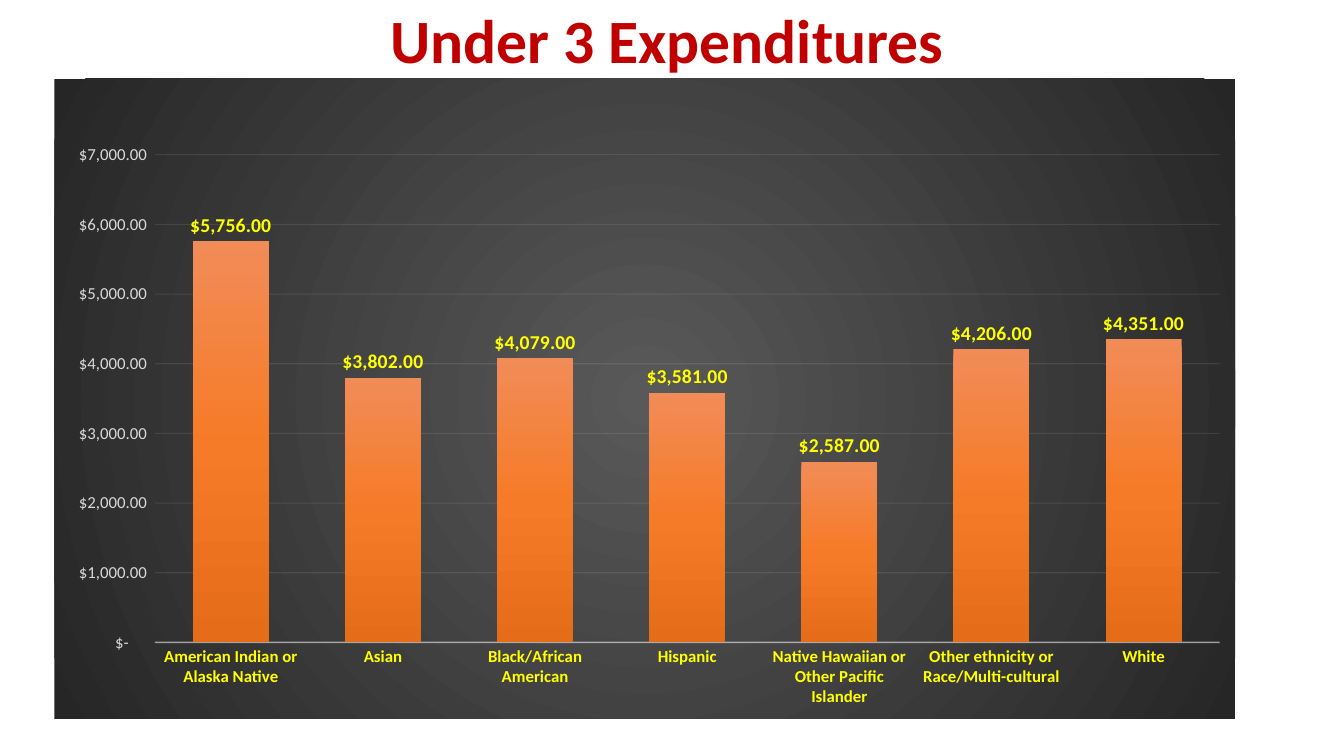
"""Build the slide on spending for children under three, by group."""
from dataclasses import dataclass

from lxml import etree
from pptx import Presentation
from pptx.chart.data import CategoryChartData as ChartData
from pptx.dml.color import RGBColor as Color
from pptx.enum.chart import XL_CHART_TYPE as Kind
from pptx.enum.chart import XL_LABEL_POSITION as Place
from pptx.enum.chart import XL_TICK_MARK as Tick
from pptx.enum.text import MSO_ANCHOR as Anchor
from pptx.enum.text import PP_ALIGN as Align
from pptx.oxml import parse_xml
from pptx.oxml.ns import qn
from pptx.util import Inches, Pt

DRAW = "http://schemas.openxmlformats.org/drawingml/2006/main"
CHART = "http://schemas.openxmlformats.org/drawingml/2006/chart"
MONEY = r'_("$"* #,##0.00_);_("$"* \(#,##0.00\);_("$"* "-"??_);_(@_)'
LINEAR = '<a:lin ang="5400000" scaled="0"/>'
CIRCLE = ('<a:path path="circle"><a:fillToRect l="50000" t="50000" '
          'r="50000" b="50000"/></a:path>')

SPEND = {
    "American Indian or Alaska Native": 5756,
    "Asian": 3802,
    "Black/African American": 4079,
    "Hispanic": 3581,
    "Native Hawaiian or Other Pacific Islander": 2587,
    "Other ethnicity or Race/Multi-cultural": 4206,
    "White": 4351,
}


@dataclass(frozen=True)
class Theme:
    font: str = "Calibri"
    title: str = "C00000"
    label: str = "FFFF00"
    scale: str = "D9D9D9"
    rule: str = "F2F2F2"
    bars: tuple = ((0, "F18C57"), (50, "F67B28"), (100, "E56C19"))
    back: tuple = ((0, "595959"), (100, "262626"))
    head_size: int = 44
    mark_size: int = 14
    axis_size: int = 12
    base_size: int = 10


def blend(stops, shade):
    marks = "".join(f'<a:gs pos="{at * 1000}"><a:srgbClr val="{tone}"/></a:gs>'
                    for at, tone in stops)
    return parse_xml(f'<a:gradFill xmlns:a="{DRAW}" rotWithShape="1">'
                     f'<a:gsLst>{marks}</a:gsLst>{shade}</a:gradFill>')


class Deck:
    def __init__(self, theme):
        self.theme = theme
        self.show = Presentation()
        self.show.slide_width = Inches(13.33)
        self.show.slide_height = Inches(7.5)
        self.slide = self.show.slides.add_slide(self.show.slide_layouts[5])

    def style(self, font, size, tone, bold=False):
        font.name = self.theme.font
        font.size = Pt(size)
        font.bold = bold
        font.color.rgb = Color.from_string(tone)

    def title(self, text, *box):
        shape = self.slide.shapes.title
        shape.left, shape.top, shape.width, shape.height = map(Inches, box)
        frame = shape.text_frame
        frame.text = text
        frame.vertical_anchor = Anchor.MIDDLE
        line = frame.paragraphs[0]
        line.alignment = Align.CENTER
        line.line_spacing = 0.9
        self.style(line.font, self.theme.head_size, self.theme.title, True)

    def rule(self, part, width, alpha):
        line = part.format.line
        line.width = Pt(width)
        line.color.rgb = Color.from_string(self.theme.rule)
        tone = part.format.element.find(f"{qn('c:spPr')}//{qn('a:srgbClr')}")
        etree.SubElement(tone, qn("a:alpha"), val=str(alpha * 1000))

    def axis(self, axis, tone, bold):
        axis.major_tick_mark = axis.minor_tick_mark = Tick.NONE
        self.style(axis.tick_labels.font, self.theme.axis_size, tone, bold)

    def layout(self, chart, **frame):
        area = chart.element.find(f".//{qn('c:plotArea')}")
        old = area.find(qn("c:layout"))
        if old is not None:
            area.remove(old)
        parts = "".join(f'<c:{key} val="{val}"/>' for key, val in frame.items())
        area.insert(0, parse_xml(
            f'<c:layout xmlns:c="{CHART}"><c:manualLayout>'
            '<c:layoutTarget val="inner"/><c:xMode val="edge"/>'
            f'<c:yMode val="edge"/>{parts}</c:manualLayout></c:layout>'))

    def fill(self, chart):
        root = chart.element
        panel = parse_xml(f'<c:spPr xmlns:c="{CHART}" xmlns:a="{DRAW}">'
                          '<a:ln><a:noFill/></a:ln></c:spPr>')
        panel.insert(0, blend(self.theme.back, CIRCLE))
        root.find(qn("c:chart")).addnext(panel)
        bars = chart.plots[0].series[0]
        bars.invert_if_negative = False
        bars.format.fill.solid()
        solid = root.find(f".//{qn('c:ser')}/{qn('c:spPr')}/{qn('a:solidFill')}")
        solid.getparent().replace(solid, blend(self.theme.bars, LINEAR))

    def chart(self, spend, *box):
        theme = self.theme
        data = ChartData(number_format=MONEY)
        data.categories = list(spend)
        data.add_series("Series 1", list(spend.values()))
        chart = self.slide.shapes.add_chart(
            Kind.COLUMN_CLUSTERED, *map(Inches, box), data).chart
        chart.has_legend = chart.has_title = False
        chart.font.name = theme.font
        chart.font.size = Pt(theme.base_size)

        plot = chart.plots[0]
        plot.gap_width, plot.overlap = 100, -24
        plot.vary_by_categories = False
        plot.has_data_labels = True
        marks = plot.data_labels
        marks.show_value = True
        marks.position = Place.OUTSIDE_END
        marks.number_format = MONEY
        marks.number_format_is_linked = False
        self.style(marks.font, theme.mark_size, theme.label, True)

        groups, scale = chart.category_axis, chart.value_axis
        self.axis(groups, theme.label, True)
        self.rule(groups, 1, 54)
        self.axis(scale, theme.scale, False)
        scale.format.line.fill.background()
        scale.minimum_scale, scale.maximum_scale = 0, 7000
        scale.major_unit = 1000
        scale.tick_labels.number_format = MONEY
        scale.tick_labels.number_format_is_linked = False
        scale.has_major_gridlines = True
        self.rule(scale.major_gridlines, 0.75, 10)

        self.layout(chart, x=0.085, y=0.119, w=0.902, h=0.762)
        self.fill(chart)


def main():
    deck = Deck(Theme())
    deck.title("Under 3 Expenditures", 0.87, 0, 11.5, 0.86)
    deck.chart(SPEND, 0.54, 0.78, 11.71, 6.35)
    deck.show.save("out.pptx")


if __name__ == "__main__":
    main()
